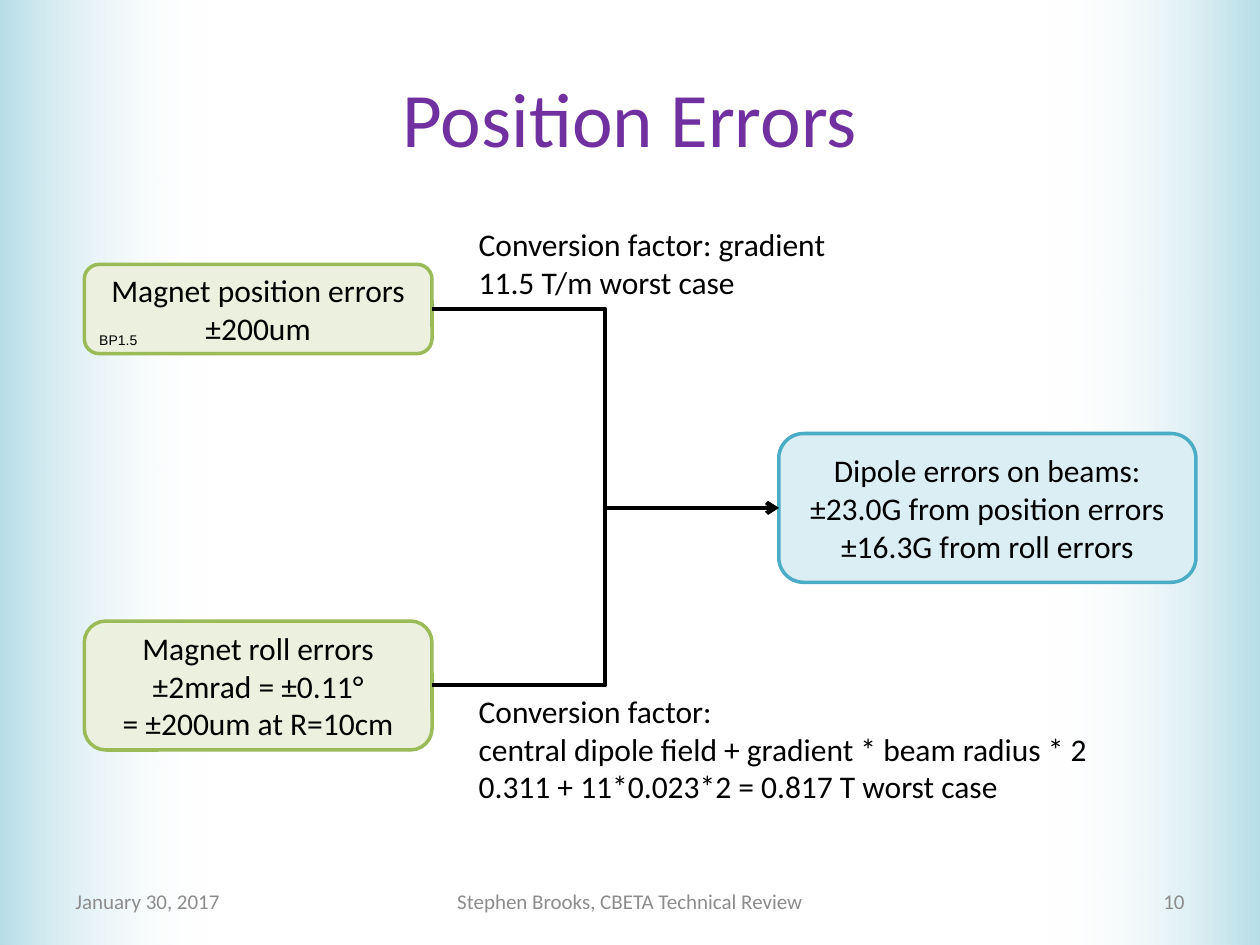
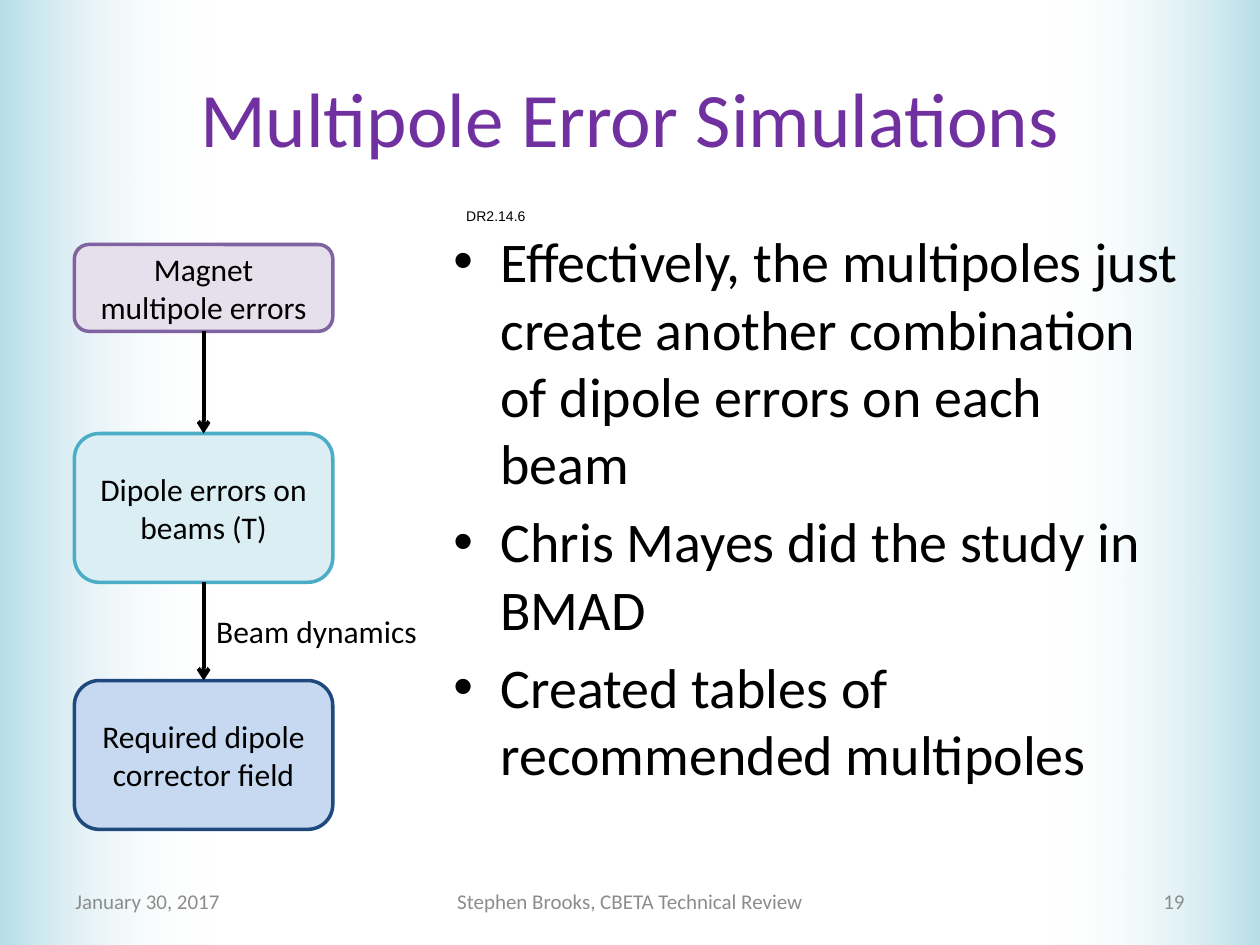
from lxml import etree
from pptx import Presentation
from pptx.dml.color import RGBColor
from pptx.enum import shapes, text
from pptx.oxml.ns import qn
from pptx.util import Cm, Pt

BLACK = RGBColor(0x00, 0x00, 0x00)
WHITE = RGBColor(0xFF, 0xFF, 0xFF)
PURPLE = RGBColor(0x70, 0x30, 0xA0)
GREY = RGBColor(0x8C, 0x8C, 0x8C)
EDGE_BLUE = RGBColor(0xB7, 0xDE, 0xE8)

# Box colours: fill, outline
GREEN_BOX = (RGBColor(0xEB, 0xF1, 0xDE), RGBColor(0x9B, 0xBB, 0x59))
AQUA_BOX = (RGBColor(0xDB, 0xEE, 0xF4), RGBColor(0x4B, 0xAC, 0xC6))
VIOLET_BOX = (RGBColor(0xE6, 0xE0, 0xEC), RGBColor(0x80, 0x64, 0xA2))
BLUE_BOX = (RGBColor(0xC6, 0xD9, 0xF1), RGBColor(0x1F, 0x49, 0x7D))

LEFT, CENTER, RIGHT = text.PP_ALIGN.LEFT, text.PP_ALIGN.CENTER, text.PP_ALIGN.RIGHT
TOP, MIDDLE = text.MSO_ANCHOR.TOP, text.MSO_ANCHOR.MIDDLE
SITE_LEFT, SITE_BOTTOM, SITE_RIGHT, SITE_TOP = 1, 2, 3, 0

# All places are left, top, width, height in centimetres
SLIDE_WIDTH, SLIDE_HEIGHT, BAND_WIDTH = 25.4, 19.05, 4.29
TITLE_PLACE = (1.27, 0.76, 22.86, 3.18)
BODY_PLACE = (8.89, 4.45, 15.24, 12.57)
FOOTER_TOP, FOOTER_HEIGHT = 17.65, 1.02
DATE = "January 30, 2017"
EVENT = "Stephen Brooks, CBETA Technical Review"

SLIDES = [
    {
        "title": "Position Errors",
        "number": "10",
        "boxes": {
            "dipole": ((15.7, 8.74, 8.41, 3), AQUA_BOX,
                       ["Dipole errors on beams:", "±23.0G from position errors",
                        "±16.3G from roll errors"]),
            "position": ((1.7, 5.33, 7.01, 1.8), GREEN_BOX,
                         ["Magnet position errors", "±200um"]),
            "roll": ((1.7, 12.52, 7.01, 2.6), GREEN_BOX,
                     ["Magnet roll errors", "±2mrad = ±0.11°", "= ±200um at R=10cm"]),
        },
        "elbows": [("roll", "dipole"), ("position", "dipole")],
        "labels": [
            ((9.4, 4.42, 7.57, 1.8),
             ["Conversion factor: gradient", "11.5 T/m worst case"]),
            ((9.4, 13.82, 12.95, 2.57),
             ["Conversion factor:", "central dipole field + gradient * beam radius * 2",
              "0.311 + 11*0.023*2 = 0.817 T worst case"]),
        ],
        "tag": ((1.9, 6.58, 1, 0.53), "BP1.5"),
    },
    {
        "title": "Multipole Error Simulations",
        "number": "19",
        "bullets": [
            "Effectively, the multipoles just create another combination "
            "of dipole errors on each beam",
            "Chris Mayes did the study in BMAD",
            "Created tables of recommended multipoles",
        ],
        "boxes": {
            "dipole": ((1.5, 8.74, 5.21, 3), AQUA_BOX, ["Dipole errors on beams (T)"]),
            "multipole": ((1.5, 4.93, 5.21, 1.75), VIOLET_BOX, ["Magnet multipole errors"]),
            "corrector": ((1.5, 13.72, 5.21, 3), BLUE_BOX,
                          ["Required dipole corrector field"]),
        },
        "drops": [("dipole", "corrector"), ("multipole", "dipole")],
        "labels": [((4.11, 12.22, 4.6, 1.02), ["Beam dynamics"])],
        "tag": ((9.3, 4.09, 1.42, 0.53), "DR2.14.6"),
    },
]


def lengths(place):
    return [Cm(value) for value in place]


def write(frame, lines, size=18, color=BLACK, align=LEFT, anchor=TOP, font="Calibri"):
    frame.word_wrap = True
    frame.vertical_anchor = anchor
    for index, line in enumerate(lines):
        paragraph = frame.add_paragraph() if index else frame.paragraphs[0]
        paragraph.alignment = align
        run = paragraph.add_run()
        run.text = line
        run.font.name = font
        run.font.size = Pt(size)
        run.font.color.rgb = color


def add_text(slide, place, lines, **style):
    frame = slide.shapes.add_textbox(*lengths(place)).text_frame
    write(frame, lines, **style)
    return frame


def add_label(slide, place, lines, **style):
    """Add text that never wraps and whose box fits it."""
    frame = add_text(slide, place, lines, **style)
    frame.word_wrap = False
    frame.auto_size = text.MSO_AUTO_SIZE.SHAPE_TO_FIT_TEXT
    return frame


def add_band(slide, left, rotation):
    """Add a side band that fades from blue to clear white."""
    band = slide.shapes.add_shape(shapes.MSO_SHAPE.RECTANGLE,
                                  *lengths((left, 0, BAND_WIDTH, SLIDE_HEIGHT)))
    band.rotation = rotation
    band.shadow.inherit = False
    band.line.fill.background()
    band.fill.gradient()
    band.fill.gradient_angle = 0
    for stop, color, position in zip(band.fill.gradient_stops, (EDGE_BLUE, WHITE), (0, 1)):
        stop.color.rgb = color
        stop.position = position
    clear_color = list(band.fill._xPr.iter(qn("a:srgbClr")))[-1]
    etree.SubElement(clear_color, qn("a:alpha"), val="0")


def add_frame(slide, title, number):
    """Add what every slide shares: bands, title and footer."""
    add_band(slide, SLIDE_WIDTH - BAND_WIDTH, 180)
    add_band(slide, 0, 0)
    add_text(slide, TITLE_PLACE, [title], size=44, color=PURPLE, align=CENTER, anchor=MIDDLE)
    for left, width, line, align in ((1.27, 5.93, DATE, LEFT), (8.68, 8.04, EVENT, CENTER),
                                     (18.2, 5.93, number, RIGHT)):
        add_text(slide, (left, FOOTER_TOP, width, FOOTER_HEIGHT), [line],
                 size=12, color=GREY, align=align, anchor=MIDDLE)


def add_bullets(slide, lines):
    frame = add_text(slide, BODY_PLACE, lines, size=32)
    for paragraph in frame.paragraphs:
        paragraph.space_before = Pt(6.4)
        properties = paragraph._p.get_or_add_pPr()
        properties.set("marL", str(Cm(0.95)))
        properties.set("indent", str(-Cm(0.95)))
        etree.SubElement(properties, qn("a:buFont"), typeface="Arial")
        etree.SubElement(properties, qn("a:buChar"), char="•")


def add_box(slide, place, colors, lines):
    box = slide.shapes.add_shape(shapes.MSO_SHAPE.ROUNDED_RECTANGLE, *lengths(place))
    box.shadow.inherit = False
    box.fill.solid()
    box.fill.fore_color.rgb, box.line.color.rgb = colors
    box.line.width = Pt(2)
    write(box.text_frame, lines, align=CENTER, anchor=MIDDLE)
    return box


def site_point(box, site):
    middle_x, middle_y = box.left + box.width // 2, box.top + box.height // 2
    return {SITE_TOP: (middle_x, box.top), SITE_LEFT: (box.left, middle_y),
            SITE_BOTTOM: (middle_x, box.top + box.height),
            SITE_RIGHT: (box.left + box.width, middle_y)}[site]


def add_arrow(slide, kind, start, start_site, end, end_site):
    arrow = slide.shapes.add_connector(kind, *site_point(start, start_site),
                                       *site_point(end, end_site))
    arrow.begin_connect(start, start_site)
    arrow.end_connect(end, end_site)
    arrow.line.color.rgb = BLACK
    arrow.line.width = Pt(2.25)
    properties = arrow._element.spPr
    etree.SubElement(properties.find(qn("a:ln")), qn("a:tailEnd"), type="arrow")
    etree.SubElement(properties, qn("a:effectLst"))


def build_slide(presentation, content):
    slide = presentation.slides.add_slide(presentation.slide_layouts[6])
    add_frame(slide, content["title"], content["number"])
    if "bullets" in content:
        add_bullets(slide, content["bullets"])
    boxes = {name: add_box(slide, *box) for name, box in content["boxes"].items()}
    for start, end in content.get("elbows", []):
        add_arrow(slide, shapes.MSO_CONNECTOR.ELBOW, boxes[start], SITE_RIGHT,
                  boxes[end], SITE_LEFT)
    for start, end in content.get("drops", []):
        add_arrow(slide, shapes.MSO_CONNECTOR.STRAIGHT, boxes[start], SITE_BOTTOM,
                  boxes[end], SITE_TOP)
    for place, lines in content["labels"]:
        add_label(slide, place, lines)
    place, tag = content["tag"]
    frame = add_label(slide, place, [tag], size=8, font="Arial")
    frame.margin_left = frame.margin_right = frame.margin_top = frame.margin_bottom = Cm(0.1)


def main():
    presentation = Presentation()
    presentation.slide_width, presentation.slide_height = Cm(SLIDE_WIDTH), Cm(SLIDE_HEIGHT)
    for content in SLIDES:
        build_slide(presentation, content)
    presentation.save("out.pptx")


if __name__ == "__main__":
    main()
